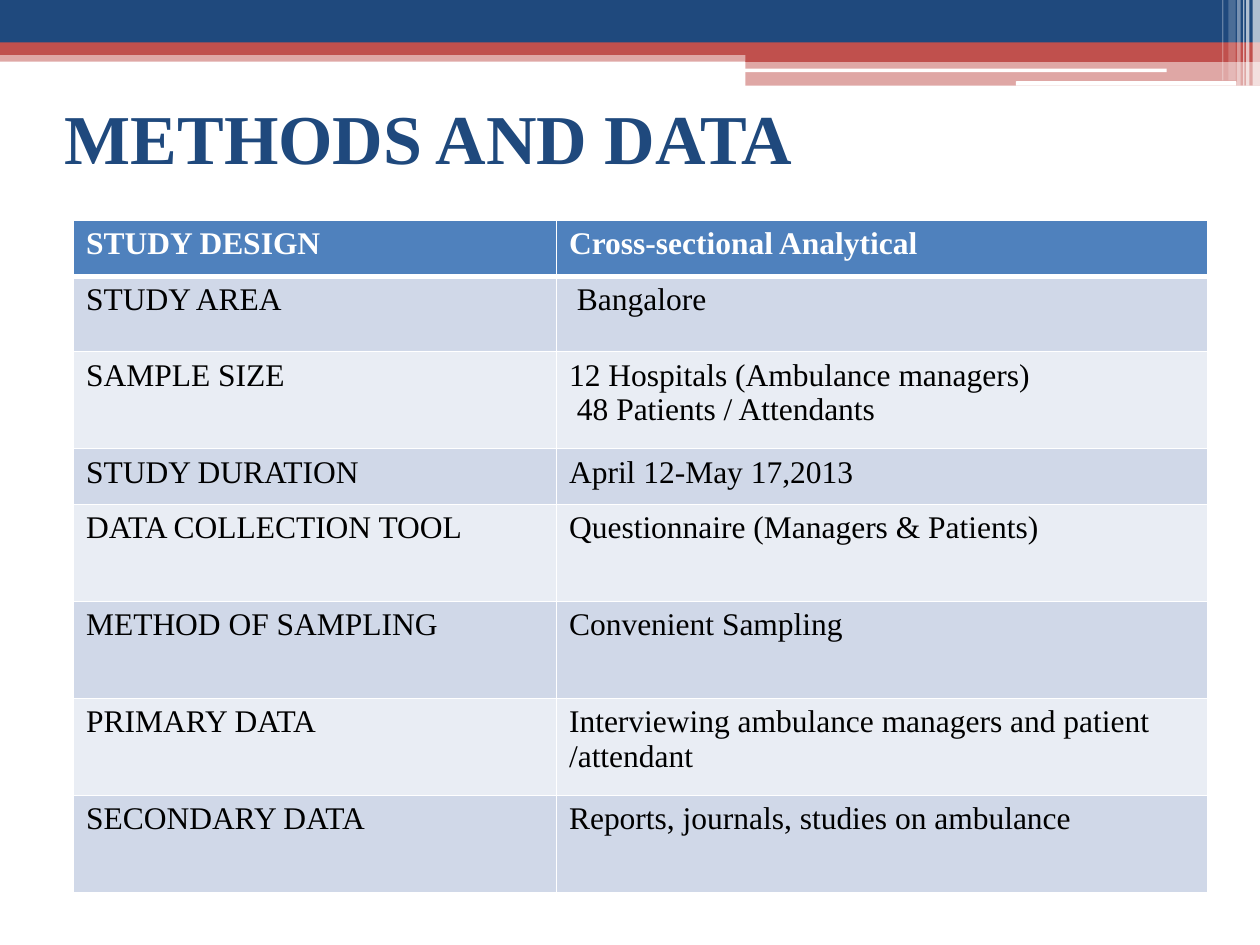
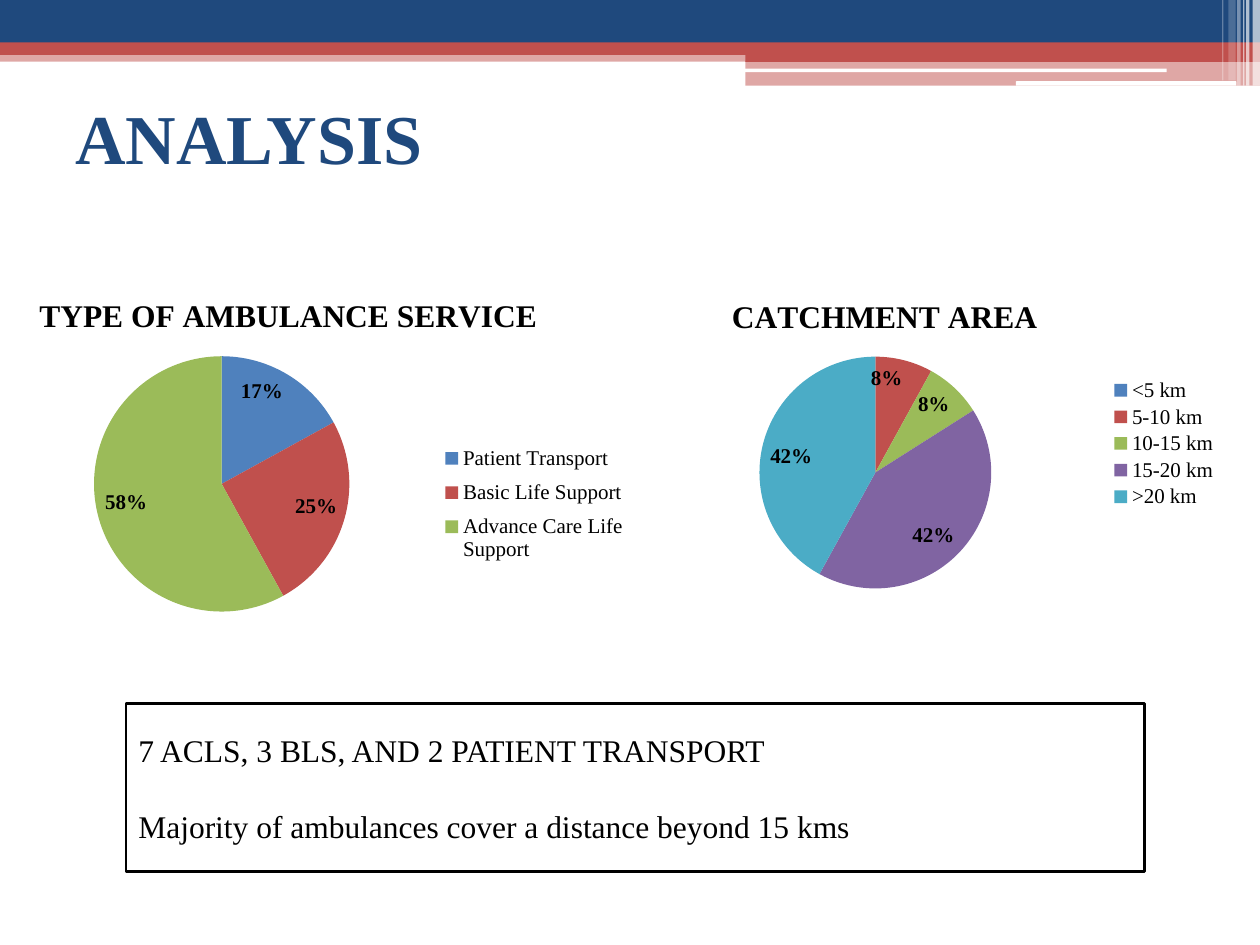
from lxml import etree
from pptx import Presentation
from pptx.chart.data import CategoryChartData
from pptx.dml.color import RGBColor
from pptx.enum.chart import XL_CHART_TYPE, XL_LABEL_POSITION, XL_LEGEND_POSITION
from pptx.enum.shapes import MSO_SHAPE
from pptx.enum.text import MSO_ANCHOR, PP_ALIGN
from pptx.oxml import parse_xml
from pptx.oxml.ns import nsdecls, qn
from pptx.util import Pt

PIE = XL_CHART_TYPE.PIE
INSIDE = XL_LABEL_POSITION.INSIDE_END
RIGHT = XL_LEGEND_POSITION.RIGHT
RECT = MSO_SHAPE.RECTANGLE
ROUND = MSO_SHAPE.ROUNDED_RECTANGLE
MIDDLE = MSO_ANCHOR.MIDDLE
LEFT = PP_ALIGN.LEFT
FACE = "Times New Roman"
NAVY, RED, WHITE, BLACK = "1F497D", "C0504D", "FFFFFF", "000000"
BLUE, PALE, MIST = "4F81BD", "D0D8E8", "E9EDF4"
HUES = [BLUE, RED, "9BBB59", "8064A2", "4BACC6"]
rgb = RGBColor.from_string


def paint(shape, hue, alpha=100):
    shape.shadow.inherit = False
    shape.line.fill.background()
    shape.fill.solid()
    shape.fill.fore_color.rgb = rgb(hue)
    if alpha < 100:
        tone = shape.fill._xPr.find(".//" + qn("a:srgbClr"))
        etree.SubElement(tone, qn("a:alpha")).set("val", str(alpha * 1000))


def write(frame, lines, hue, gap=0, **style):
    frame.word_wrap = True
    for i, line in enumerate(lines):
        para = frame.paragraphs[0] if i == 0 else frame.add_paragraph()
        para.alignment = LEFT
        if i:
            para.space_before = Pt(gap)
        run = para.add_run()
        run.text = line
        run.font.color.rgb = rgb(hue)
        for key, val in {"name": FACE, "bold": False, **style}.items():
            setattr(run.font, key, val)


deck = Presentation()
deck.slide_width, deck.slide_height = Pt(720), Pt(540)

bands = [
    (RECT, 0, 28.8, 720, 6.5, RED, 50),
    (RECT, 0, 0, 720, 24.5, NAVY, 100),
    (RECT, 0, 24.2, 720, 7.2, RED, 100),
    (RECT, 426, 28.2, 294, 7.2, RED, 100),
    (RECT, 426, 34.7, 294, 14.2, RED, 50),
    (ROUND, 425.5, 39.2, 241.2, 2.1, WHITE, 100),
    (ROUND, 580.5, 46.4, 126, 2.6, WHITE, 100),
    (RECT, 715.8, 0, 4.2, 49, WHITE, 65),
    (RECT, 712, 0, 2, 49, WHITE, 65),
    (RECT, 710.4, 0, 0.7, 49, WHITE, 60),
    (RECT, 707, 0, 2, 49, WHITE, 40),
    (RECT, 702, 0, 4.2, 46, WHITE, 20),
    (RECT, 698.4, 0, 0.7, 46, WHITE, 30),
]
titles = [
    ("METHODS AND DATA", 30, 36, 84),
    ("ANALYSIS", 36, 42, 72),
]
slides = []
for text, left, top, high in titles:
    slide = deck.slides.add_slide(deck.slide_layouts[6])
    slides.append(slide)
    for kind, x, y, w, h, hue, alpha in bands:
        paint(slide.shapes.add_shape(kind, Pt(x), Pt(y), Pt(w), Pt(h)), hue, alpha)
    frame = slide.shapes.add_textbox(Pt(left), Pt(top), Pt(648), Pt(high)).text_frame
    frame.vertical_anchor = MIDDLE
    write(frame, [text], NAVY, size=Pt(40), bold=True)

rows = [
    (32, "STUDY DESIGN", ["Cross-sectional Analytical"]),
    (43, "STUDY AREA", [" Bangalore"]),
    (55.4, "SAMPLE SIZE", ["12 Hospitals (Ambulance managers)", " 48 Patients / Attendants"]),
    (32, "STUDY DURATION", ["April 12-May 17,2013"]),
    (55.4, "DATA COLLECTION TOOL", ["Questionnaire (Managers & Patients)"]),
    (55.4, "METHOD OF SAMPLING", ["Convenient Sampling"]),
    (55.4, "PRIMARY DATA", ["Interviewing ambulance managers and patient /attendant"]),
    (55.4, "SECONDARY DATA", ["Reports, journals, studies on ambulance"]),
]
high = sum(row[0] for row in rows)
table = slides[0].shapes.add_table(len(rows), 2, Pt(42), Pt(126), Pt(648), Pt(high)).table
table.columns[0].width, table.columns[1].width = Pt(276), Pt(372)
for r, (high, label, lines) in enumerate(rows):
    table.rows[r].height = Pt(high)
    for c, text in enumerate([[label], lines]):
        cell = table.cell(r, c)
        cell.fill.solid()
        cell.fill.fore_color.rgb = rgb(BLUE if r == 0 else PALE if r % 2 else MIST)
        write(cell.text_frame, text, BLACK if r else WHITE, size=Pt(18), bold=r == 0)
        props = cell._tc.get_or_add_tcPr()
        for i, side in enumerate("LRTB"):
            thick = 3 if (r, side) in [(0, "B"), (1, "T")] else 1
            props.insert(i, parse_xml(
                f'<a:ln{side} {nsdecls("a")} w="{Pt(thick)}"><a:solidFill>'
                f'<a:srgbClr val="{WHITE}"/></a:solidFill></a:ln{side}>'))

box = slides[1].shapes.add_shape(RECT, Pt(72), Pt(402), Pt(582), Pt(96))
paint(box, WHITE)
box.line.color.rgb = rgb(BLACK)
box.line.width = Pt(1.5)
box.text_frame.vertical_anchor = MIDDLE
notes = ["7 ACLS, 3 BLS, AND 2 PATIENT TRANSPORT",
         "Majority of ambulances cover a distance beyond 15 kms"]
write(box.text_frame, notes, BLACK, gap=22, size=Pt(18))

pies = [
    {"title": "TYPE OF AMBULANCE SERVICE", "at": (0, 138, 384, 252),
     "data": {"Patient Transport": 17, "Basic Life Support": 25, "Advance Care Life Support": 58},
     "spots": {"title": (0.05, 0.11), "plotArea": (0.14, 0.26, 0.38, 0.58),
               "legend": (0.65, 0.44, 0.29, 0.31)}},
    {"title": "CATCHMENT AREA", "at": (324, 150, 379, 207),
     "data": {"<5 km": 0, "5-10 km": 8, "10-15 km": 8, "15-20 km": 42, ">20 km": 42},
     "spots": {"title": (0.24, 0.08), "plotArea": (0.29, 0.26, 0.35, 0.64),
               "legend": (0.81, 0.31, 0.18, 0.38)}},
]
marks = {"show_percentage": True, "show_value": False, "number_format": "0%",
         "number_format_is_linked": False, "position": INSIDE}
for pie in pies:
    data = CategoryChartData()
    data.categories = list(pie["data"])
    data.add_series("Series 1", list(pie["data"].values()))
    place = [Pt(n) for n in pie["at"]]
    chart = slides[1].shapes.add_chart(PIE, *place, data).chart
    chart.font.name, chart.font.size = FACE, Pt(10)
    chart.font.color.rgb = rgb(BLACK)
    chart.has_title = True
    write(chart.chart_title.text_frame, [pie["title"]], BLACK, size=Pt(18), bold=True)
    chart.has_legend = True
    chart.legend.position = RIGHT
    chart.legend.include_in_layout = False
    chart.legend.font.name, chart.legend.font.size = FACE, Pt(12)

    plot = chart.plots[0]
    plot.vary_by_categories = True
    series = plot.series[0]
    labels = series.data_labels
    for key, val in marks.items():
        setattr(labels, key, val)
    for key, val in {"name": FACE, "size": Pt(12), "bold": True}.items():
        setattr(labels.font, key, val)
    for i, value in enumerate(pie["data"].values()):
        fill = series.points[i].format.fill
        fill.solid()
        fill.fore_color.rgb = rgb(HUES[i])
        if value == 0:
            labels._element.insert(0, parse_xml(
                f'<c:dLbl {nsdecls("c")}><c:idx val="{i}"/><c:delete val="1"/></c:dLbl>'))

    root = chart._chartSpace.find(qn("c:chart"))
    root.addnext(parse_xml(
        f'<c:spPr {nsdecls("c", "a")}><a:noFill/><a:ln><a:noFill/></a:ln></c:spPr>'))
    for part, spot in pie["spots"].items():
        node = root.find(qn("c:" + part))
        for old in node.findall(qn("c:layout")):
            node.remove(old)
        tags = [("xMode", "edge"), ("yMode", "edge"), *zip("xywh", spot)]
        if part == "plotArea":
            tags.insert(0, ("layoutTarget", "inner"))
        inner = "".join(f'<c:{tag} val="{val}"/>' for tag, val in tags)
        node.insert(0 if part == "plotArea" else 1, parse_xml(
            f'<c:layout {nsdecls("c")}><c:manualLayout>{inner}</c:manualLayout></c:layout>'))

deck.save("out.pptx")
